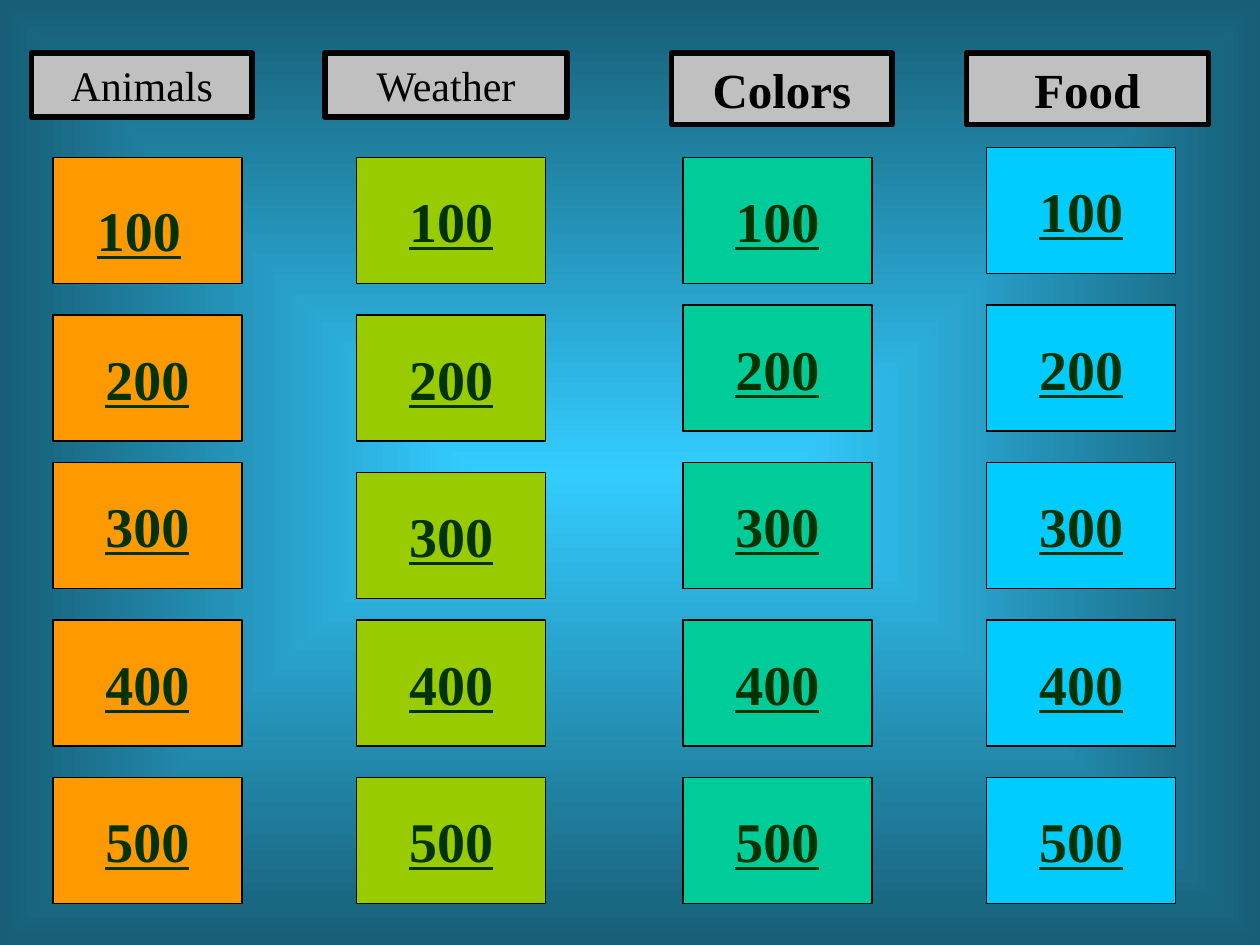
from lxml import etree
from pptx import Presentation
from pptx import util as u
from pptx.dml.color import RGBColor
from pptx.enum import shapes, text
from pptx.oxml import ns

COLORS = {
    "glow": "33CCFF", "edge": "175E76", "header": "C0C0C0",
    "black": "000000", "points": "003300",
    "orange": "FF9900", "lime": "99CC00", "green": "00CC99", "sky": "00CCFF",
}
FONT = "Times New Roman"
TILE_WIDTH, TILE_HEIGHT = 1.5, 1
LOWER_TOPS = [4.92, 6.17]
CATEGORIES = [
    {"name": "Animals", "header": (0.25, 0.42, 1.75, 0.51), "size": 24, "bold": False,
     "color": "orange", "left": 0.42, "tops": [1.25, 2.5, 3.67]},
    {"name": "Weather", "header": (2.58, 0.42, 1.92, 0.51), "size": 24, "bold": False,
     "color": "lime", "left": 2.83, "tops": [1.25, 2.5, 3.75]},
    {"name": "Colors", "header": (5.33, 0.42, 1.75, 0.57), "size": 28, "bold": True,
     "color": "green", "left": 5.42, "tops": [1.25, 2.42, 3.67]},
    {"name": "Food", "header": (7.67, 0.42, 1.92, 0.57), "size": 28, "bold": True,
     "color": "sky", "left": 7.83, "tops": [1.17, 2.42, 3.67]},
]


def rgb(name):
    """Return the named colour."""
    return RGBColor.from_string(COLORS[name])


def paint_background(page):
    """Fill the page with a gradient glowing from its centre."""
    fill = page.background.fill
    fill.gradient()
    for stop, name in zip(fill.gradient_stops, ("glow", "edge")):
        stop.color.rgb = rgb(name)
    linear = page.background._cSld.find(".//" + ns.qn("a:lin"))
    focus = etree.Element(ns.qn("a:path"), path="shape")
    edges = dict.fromkeys("ltrb", "50000")
    etree.SubElement(focus, ns.qn("a:fillToRect"), **edges)
    linear.getparent().replace(linear, focus)


def add_panel(page, kind, bounds, color, line_width):
    """Add a filled, outlined shape and return it."""
    panel = page.shapes.add_shape(kind, *map(u.Inches, bounds))
    panel.shadow.inherit = False
    panel.fill.solid()
    panel.fill.fore_color.rgb = rgb(color)
    panel.line.color.rgb = rgb("black")
    panel.line.width = u.Pt(line_width)
    return panel


def write(box, words, size, color, bold, align=text.PP_ALIGN.CENTER):
    """Put one formatted paragraph in a box and return its font."""
    para = box.text_frame.paragraphs[0]
    para.text = words
    para.alignment = align
    font = para.font
    font.name, font.size, font.bold = FONT, u.Pt(size), bold
    font.color.rgb = rgb(color)
    return font


def write_points(box, points, align=text.PP_ALIGN.CENTER):
    """Write an underlined point value in a box."""
    write(box, str(points), 32, "points", True, align).underline = True


def add_header(page, category):
    """Add the name box above a category."""
    header = add_panel(page, shapes.MSO_SHAPE.RECTANGLE, category["header"], "header", 3)
    header.text_frame.vertical_anchor = text.MSO_ANCHOR.TOP
    header.text_frame.word_wrap = True
    header.text_frame.auto_size = text.MSO_AUTO_SIZE.SHAPE_TO_FIT_TEXT
    write(header, category["name"], category["size"], "black", category["bold"])


def add_tile(page, left, top, color):
    """Add an empty question button and return it."""
    bounds = (left, top, TILE_WIDTH, TILE_HEIGHT)
    return add_panel(page, shapes.MSO_SHAPE.ACTION_BUTTON_CUSTOM, bounds, color, 0.75)


def add_loose_points(page, points, bounds):
    """Add a point value in a text box of its own."""
    box = page.shapes.add_textbox(*map(u.Inches, bounds))
    box.text_frame.word_wrap = True
    box.text_frame.auto_size = text.MSO_AUTO_SIZE.SHAPE_TO_FIT_TEXT
    write_points(box, points, text.PP_ALIGN.LEFT)


def add_category(page, category):
    """Add a category header and its column of question buttons."""
    add_header(page, category)
    for row, top in enumerate(category["tops"] + LOWER_TOPS, start=1):
        tile = add_tile(page, category["left"], top, category["color"])
        if category["name"] == "Animals" and row == 1:
            add_loose_points(page, 100, (0.67, 1.5, 0.92, 0.63))
        else:
            tile.text_frame.word_wrap = False
            tile.text_frame.vertical_anchor = text.MSO_ANCHOR.MIDDLE
            write_points(tile, row * 100)


def main():
    """Build the quiz board and save it."""
    deck = Presentation()
    deck.slide_width, deck.slide_height = u.Inches(10), u.Inches(7.5)
    page = deck.slides.add_slide(deck.slide_layouts[6])
    paint_background(page)
    for category in CATEGORIES:
        add_category(page, category)
    deck.save("out.pptx")


if __name__ == "__main__":
    main()
